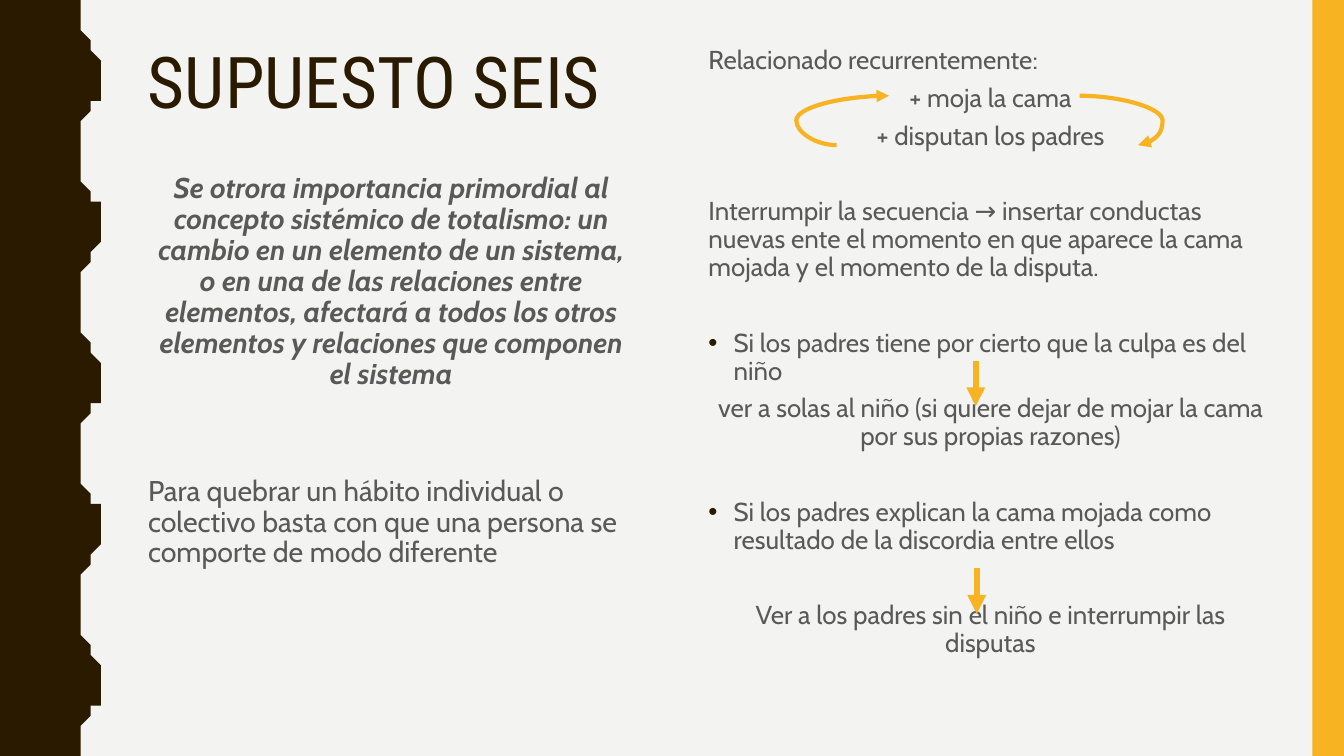
from lxml.etree import SubElement
from pptx import Presentation
from pptx.dml.color import RGBColor
from pptx.enum.shapes import MSO_CONNECTOR, MSO_SHAPE
from pptx.enum.text import PP_ALIGN
from pptx.oxml.ns import qn
from pptx.util import Inches, Pt

# Grid: square cells of a tenth of an inch
CELL = Inches(0.1)
COLUMNS, ROWS = 133.33, 75

BROWN = RGBColor(0x2A, 0x1A, 0x00)
YELLOW = RGBColor(0xF8, 0xB3, 0x23)
GREY = RGBColor(0x59, 0x59, 0x59)
PALE = RGBColor(0xF3, 0xF3, 0xF2)

# Space before a paragraph, in points
NEAR, FAR, WIDE = 7, 33.8, 61.5

# One half wave, in cells; the other half mirrors it
WAVE_X = [7.8, 7.8, 7.9, 8, 8.1, 8.3, 8.5, 8.7, 8.9, 9.1, 9.3, 9.5, 9.6, 9.7, 9.7]
WAVE_Y = [0, 0.7, 1.4, 2, 2.5, 2.9, 3.3, 3.8, 4.2, 4.6, 5, 5.5, 6.1, 6.8, 7.5]
HALF_WAVES = 10

LEFT_TEXT = [
    ("Se otrora importancia primordial al concepto sistémico de totalismo: "
     "un cambio en un elemento de un sistema, o en una de las relaciones entre "
     "elementos, afectará a todos los otros elementos y relaciones que componen "
     "el sistema", "strong", 0),
    ("Para quebrar un hábito individual o colectivo basta con que una persona "
     "se comporte de modo diferente", "plain", WIDE),
]
RIGHT_TEXT = [
    ("Relacionado recurrentemente:", "plain", 0),
    ("+ moja la cama", "center", NEAR),
    ("+ disputan los padres", "center", NEAR),
    ("Interrumpir la secuencia → insertar conductas nuevas ente el momento en "
     "que aparece la cama mojada y el momento de la disputa.", "plain", FAR),
    ("Si los padres tiene por cierto que la culpa es del niño", "bullet", FAR),
    ("ver a solas al niño (si quiere dejar de mojar la cama por sus propias "
     "razones)", "center", NEAR),
    ("Si los padres explican la cama mojada como resultado de la discordia "
     "entre ellos", "bullet", FAR),
    ("Ver a los padres sin el niño e interrumpir las disputas", "center", FAR),
]


def cells(*counts):
    return [round(count * CELL) for count in counts]


def paint(shape, color):
    shape.shadow.inherit = False
    shape.fill.solid()
    shape.fill.fore_color.rgb = color
    shape.line.fill.background()


def add_wave(page):
    points = [(0, 0)]
    for half in range(HALF_WAVES):
        across = WAVE_X if half % 2 == 0 else WAVE_X[::-1]
        points += [(x, y + half * WAVE_Y[-1]) for x, y in zip(across, WAVE_Y)]
    points.append((0, ROWS))
    builder = page.shapes.build_freeform(0, 0, scale=CELL)
    builder.add_line_segments(points[1:], close=True)
    paint(builder.convert_to_shape(), BROWN)


def add_band(page, left, width):
    band = page.shapes.add_shape(MSO_SHAPE.RECTANGLE, *cells(left, 0, width, ROWS))
    paint(band, YELLOW)


def add_bullet(para):
    properties = para._p.get_or_add_pPr()
    properties.set("marL", str(Inches(0.25)))
    properties.set("indent", str(-Inches(0.25)))
    color = SubElement(properties, qn("a:buClr"))
    SubElement(color, qn("a:srgbClr")).set("val", str(BROWN))
    SubElement(properties, qn("a:buFont")).set("typeface", "Arial")
    SubElement(properties, qn("a:buChar")).set("char", "•")


def add_text(page, place, items, size, font="Cabin", color=GREY):
    frame = page.shapes.add_textbox(*cells(*place)).text_frame
    frame.word_wrap = True
    frame.text = "\n".join(words for words, _, _ in items)
    for para, (_, style, gap) in zip(frame.paragraphs, items):
        para.line_spacing = 0.9
        para.space_before = Pt(gap)
        if style in ("center", "strong"):
            para.alignment = PP_ALIGN.CENTER
        if style == "bullet":
            add_bullet(para)
        for span in para.runs:
            span.font.name = font
            span.font.size = Pt(size)
            span.font.color.rgb = color
            span.font.bold = span.font.italic = style == "strong"


def add_arrow(page, start, end, width, bend=None):
    kind = MSO_CONNECTOR.STRAIGHT if bend is None else MSO_CONNECTOR.CURVE
    arrow = page.shapes.add_connector(kind, *cells(*start, *end))
    arrow.line.color.rgb = YELLOW
    arrow.line.width = Pt(width)
    SubElement(arrow.line._get_or_add_ln(), qn("a:tailEnd")).set("type", "triangle")
    properties = arrow._element.spPr
    SubElement(properties, qn("a:effectLst"))
    if bend is not None:
        guides = properties.find(qn("a:prstGeom")).get_or_add_avLst()
        guide = SubElement(guides, qn("a:gd"))
        guide.set("name", "adj1")
        guide.set("fmla", f"val {round(bend * 100000)}")


def main():
    deck = Presentation()
    deck.slide_width, deck.slide_height = cells(COLUMNS, ROWS)
    page = deck.slides.add_slide(deck.slide_layouts[6])
    page.background.fill.solid()
    page.background.fill.fore_color.rgb = PALE

    # Side decoration
    add_wave(page)
    add_band(page, 130.2, COLUMNS - 130.2)

    # Title and two columns of text
    add_text(page, (13.7, 4.2, 111.3, 9.2), [("SUPUESTO SEIS", "plain", 0)],
             51, "Roboto Condensed", BROWN)
    add_text(page, (13.7, 16.8, 50.2, 53.9), LEFT_TEXT, 20.4)
    add_text(page, (69.3, 4.2, 57.9, 66.5), RIGHT_TEXT, 18.5)

    # Loop between the two behaviours
    add_arrow(page, (107.1, 9.5), (112.9, 14.4), 3, bend=1.42)
    add_arrow(page, (83, 14.4), (88.2, 9.5), 3, bend=-0.77)

    # Arrows from each belief to its intervention
    for column, row in ((96.8, 35.8), (96.9, 56.4)):
        add_arrow(page, (column, row), (column, row + 4.5), 4.5)

    deck.save("out.pptx")


if __name__ == "__main__":
    main()
